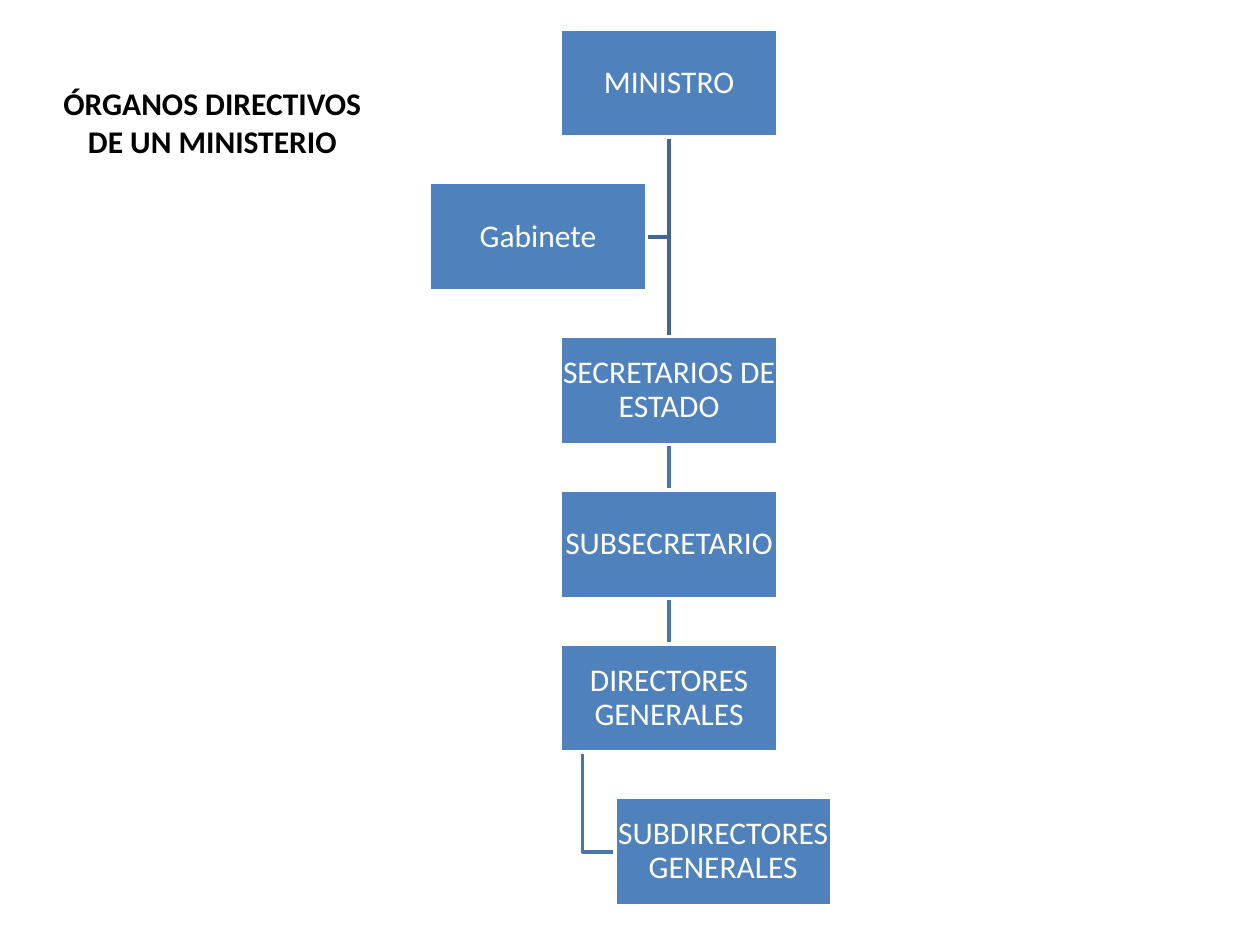
import pptx
import pptx.util
import pptx.dml.color
import pptx.enum.shapes
import pptx.enum.text
import pptx.oxml.ns
import lxml.etree

inch = pptx.util.Inches
theme = {
    "font": "Calibri", "size": 18,
    "box": "4F81BD", "edge": "FFFFFF", "light": "FFFFFF", "dark": "000000",
    "top": "3F6797", "low": "4875AC", "width": 2,
}


def color(name):
    return pptx.dml.color.RGBColor.from_string(theme[name])


def write(shape, text, ink="light", bold=False, pad=0.01, space=0.9, wrap=True,
          anchor=pptx.enum.text.MSO_ANCHOR.MIDDLE):
    frame = shape.text_frame
    frame.word_wrap = wrap
    frame.vertical_anchor = anchor
    frame.margin_left = frame.margin_right = inch(pad)
    frame.margin_top = frame.margin_bottom = inch(min(pad, 0.05))
    frame.text = text
    for para in frame.paragraphs:
        para.alignment = pptx.enum.text.PP_ALIGN.CENTER
        para.line_spacing = space
        font = para.runs[0].font
        font.name = theme["font"]
        font.size = pptx.util.Pt(theme["size"])
        font.bold = bold
        font.color.rgb = color(ink)


deck = pptx.Presentation()
deck.slide_width, deck.slide_height = inch(10), inch(7.5)
slide = deck.slides.add_slide(deck.slide_layouts[6])
shapes = slide.shapes

# Grid: one main column, six rows with equal gaps
wide, high = 1.72, 0.86
left, top, step = 4.45, 0.23, 1.22
mid = left + wide / 2
rows = [top + n * step for n in range(6)]
aside = mid - 0.18 - wide    # staff box, left of the trunk
inner = left + wide / 4      # last box, set in below its parent
stem = left + wide / 10

# Bent links
bends = [
    ("top", [(mid, rows[0] + high), (mid, rows[1] + high / 2),
             (aside + wide, rows[1] + high / 2)]),
    ("low", [(stem, rows[4] + high), (stem, rows[5] + high / 2),
             (inner, rows[5] + high / 2)]),
]
for tone, points in bends:
    spots = [(inch(x), inch(y)) for x, y in points]
    pen = shapes.build_freeform(*spots[0])
    pen.add_line_segments(spots[1:], close=False)
    link = pen.convert_to_shape()
    link.shadow.inherit = False
    link.fill.background()
    link.line.color.rgb = color(tone)
    link.line.width = pptx.util.Pt(theme["width"])

# Straight links down the trunk
for tone, first, last in [("low", 3, 4), ("low", 2, 3), ("top", 0, 2)]:
    link = shapes.add_connector(
        pptx.enum.shapes.MSO_CONNECTOR.STRAIGHT,
        inch(mid), inch(rows[first] + high), inch(mid), inch(rows[last]))
    link.line.color.rgb = color(tone)
    link.line.width = pptx.util.Pt(theme["width"])
    lxml.etree.SubElement(link._element.spPr, pptx.oxml.ns.qn("a:effectLst"))

# Boxes
posts = [
    ("MINISTRO", left, 0),
    ("SECRETARIOS DE ESTADO", left, 2),
    ("SUBSECRETARIO", left, 3),
    ("DIRECTORES GENERALES", left, 4),
    ("SUBDIRECTORES GENERALES", inner, 5),
    ("Gabinete", aside, 1),
]
for text, x, row in posts:
    box = shapes.add_shape(pptx.enum.shapes.MSO_SHAPE.RECTANGLE,
                           inch(x), inch(rows[row]), inch(wide), inch(high))
    box.shadow.inherit = False
    box.fill.solid()
    box.fill.fore_color.rgb = color("box")
    box.line.color.rgb = color("edge")
    box.line.width = pptx.util.Pt(theme["width"])
    write(box, text)

# Title
title = shapes.add_textbox(inch(0.39), inch(0.62), inch(2.59), inch(0.71))
write(title, "ÓRGANOS DIRECTIVOS\nDE UN MINISTERIO", ink="dark", bold=True,
      pad=0.1, space=1.0, wrap=False, anchor=pptx.enum.text.MSO_ANCHOR.TOP)
title.text_frame.auto_size = pptx.enum.text.MSO_AUTO_SIZE.SHAPE_TO_FIT_TEXT

deck.save("out.pptx")
